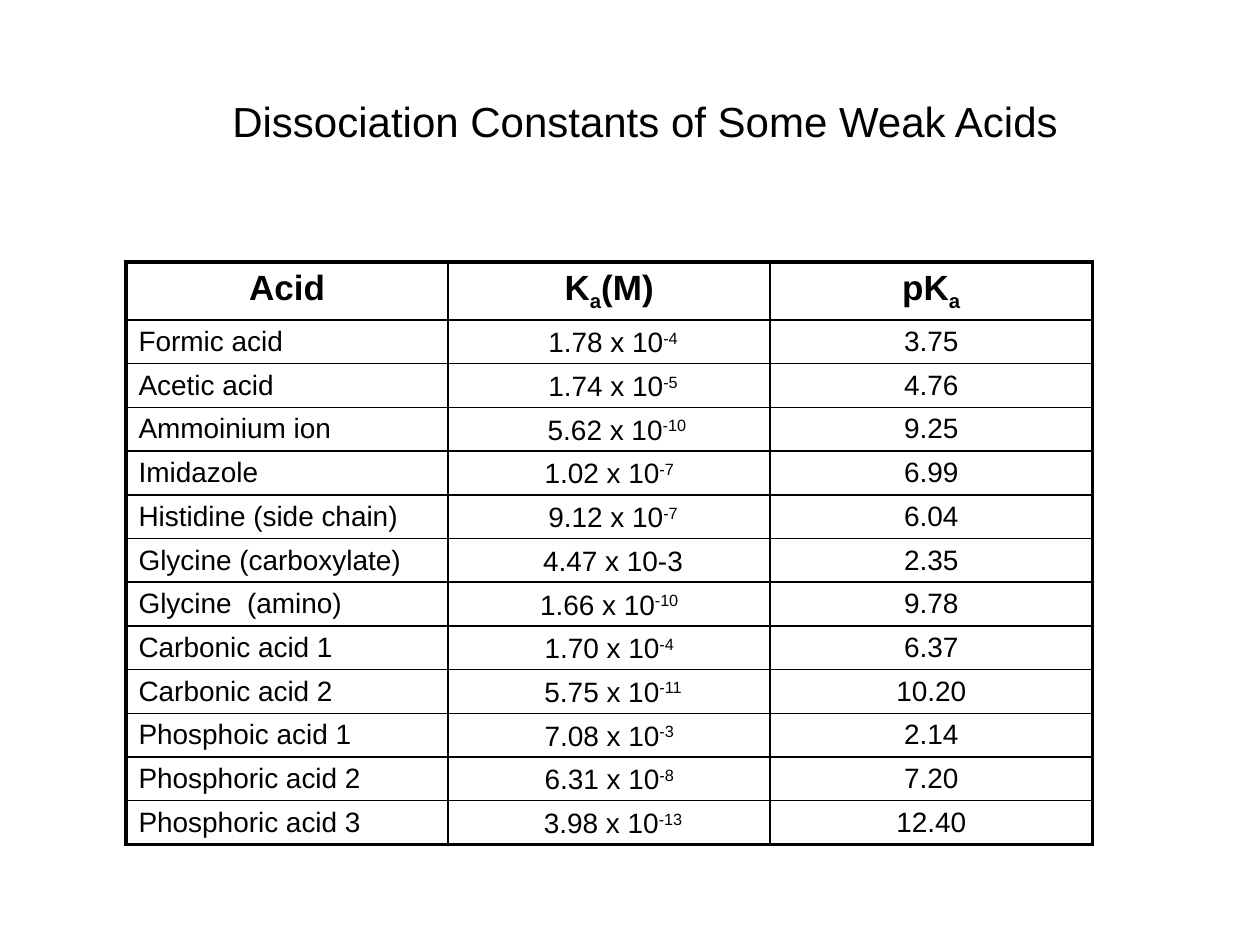
from pptx import Presentation
from pptx.dml.color import RGBColor
from pptx.enum.text import MSO_ANCHOR, PP_ALIGN
from pptx.oxml.ns import qn
from pptx.util import Inches, Pt
from lxml import etree

CENTER, LEFT = PP_ALIGN.CENTER, PP_ALIGN.LEFT
MIDDLE, TOP = MSO_ANCHOR.MIDDLE, MSO_ANCHOR.TOP
FONT = "Arial"
BLACK = "000000"
INNER, OUTER = 1, 2.25  # border widths in points
SUBSCRIPT, SUPERSCRIPT = -25000, 30000

# Each cell is a list of (text, baseline shift) pieces
HEADER = [
    [("Acid", 0)],
    [("K", 0), ("a", SUBSCRIPT), ("(M)", 0)],
    [("pK", 0), ("a", SUBSCRIPT)],
]
# Acid, constant, exponent set as superscript, pKa
ACIDS = [
    ("Formic acid", " 1.78 x 10", "-4", "3.75"),
    ("Acetic acid", " 1.74 x 10", "-5", "4.76"),
    ("Ammoinium ion", "  5.62 x 10", "-10", "9.25"),
    ("Imidazole", "1.02 x 10", "-7", "6.99"),
    ("Histidine (side chain)", " 9.12 x 10", "-7", "6.04"),
    ("Glycine (carboxylate)", " 4.47 x 10-3", "", "2.35"),
    ("Glycine  (amino)", "1.66 x 10", "-10", "9.78"),
    ("Carbonic acid 1", "1.70 x 10", "-4", "6.37"),
    ("Carbonic acid 2", " 5.75 x 10", "-11", "10.20"),
    ("Phosphoic acid 1", "7.08 x 10", "-3", "2.14"),
    ("Phosphoric acid 2", "6.31 x 10", "-8", "7.20"),
    ("Phosphoric acid 3", " 3.98 x 10", "-13", "12.40"),
]


def rgb(color):
    return RGBColor.from_string(color)


def write_pieces(paragraph, pieces, size, bold=False, align=CENTER):
    paragraph.alignment = align
    for text, baseline in pieces:
        run = paragraph.add_run()
        run.text = text
        run.font.name = FONT
        run.font.size = Pt(size)
        run.font.bold = bold
        run.font.color.rgb = rgb(BLACK)
        if baseline:
            run.font._element.set("baseline", str(baseline))


def set_borders(cell, widths, color):
    """Draw the borders; widths run left, right, top, bottom."""
    properties = cell._tc.get_or_add_tcPr()
    for side, width in zip("LRTB", widths):
        line = etree.SubElement(properties, qn(f"a:ln{side}"), w=str(int(Pt(width))))
        fill = etree.SubElement(line, qn("a:solidFill"))
        etree.SubElement(fill, qn("a:srgbClr"), val=color)


def add_title(slide, text):
    title = slide.shapes.add_textbox(Inches(0.58), Inches(0.33), Inches(9.08), Inches(1.25))
    frame = title.text_frame
    frame.word_wrap = True
    frame.vertical_anchor = MIDDLE
    write_pieces(frame.paragraphs[0], [(text, 0)], 24)


def add_acid_table(slide):
    body = [
        [[(acid, 0)], [(constant, 0)] + ([(exponent, SUPERSCRIPT)] if exponent else []), [(pka, 0)]]
        for acid, constant, exponent, pka in ACIDS
    ]
    rows = [HEADER] + body
    last_row, last_column = len(rows) - 1, len(HEADER) - 1
    table = slide.shapes.add_table(
        len(rows), len(HEADER), Inches(1), Inches(2.08), Inches(7.67), Inches(4.54)
    ).table
    table.horz_banding = False
    for row in table.rows:
        row.height = Inches(0.34)
    table.rows[0].height = Inches(0.46)

    for r, row in enumerate(rows):
        for c, pieces in enumerate(row):
            cell = table.cell(r, c)
            is_header = r == 0
            edges = (c == 0, c == last_column, is_header, r == last_row)
            set_borders(cell, [OUTER if edge else INNER for edge in edges], BLACK)
            cell.fill.background()
            cell.margin_bottom = Inches(0.03)
            cell.vertical_anchor = MIDDLE if c == 1 and not is_header else TOP
            write_pieces(
                cell.text_frame.paragraphs[0],
                pieces,
                size=20 if is_header else 16,
                bold=is_header,
                align=LEFT if c == 0 and not is_header else CENTER,
            )


def main():
    deck = Presentation()
    deck.slide_width, deck.slide_height = Inches(10), Inches(7.5)
    slide = deck.slides.add_slide(deck.slide_layouts[6])
    add_title(slide, "Dissociation Constants of Some Weak Acids")
    add_acid_table(slide)
    deck.save("out.pptx")


if __name__ == "__main__":
    main()
